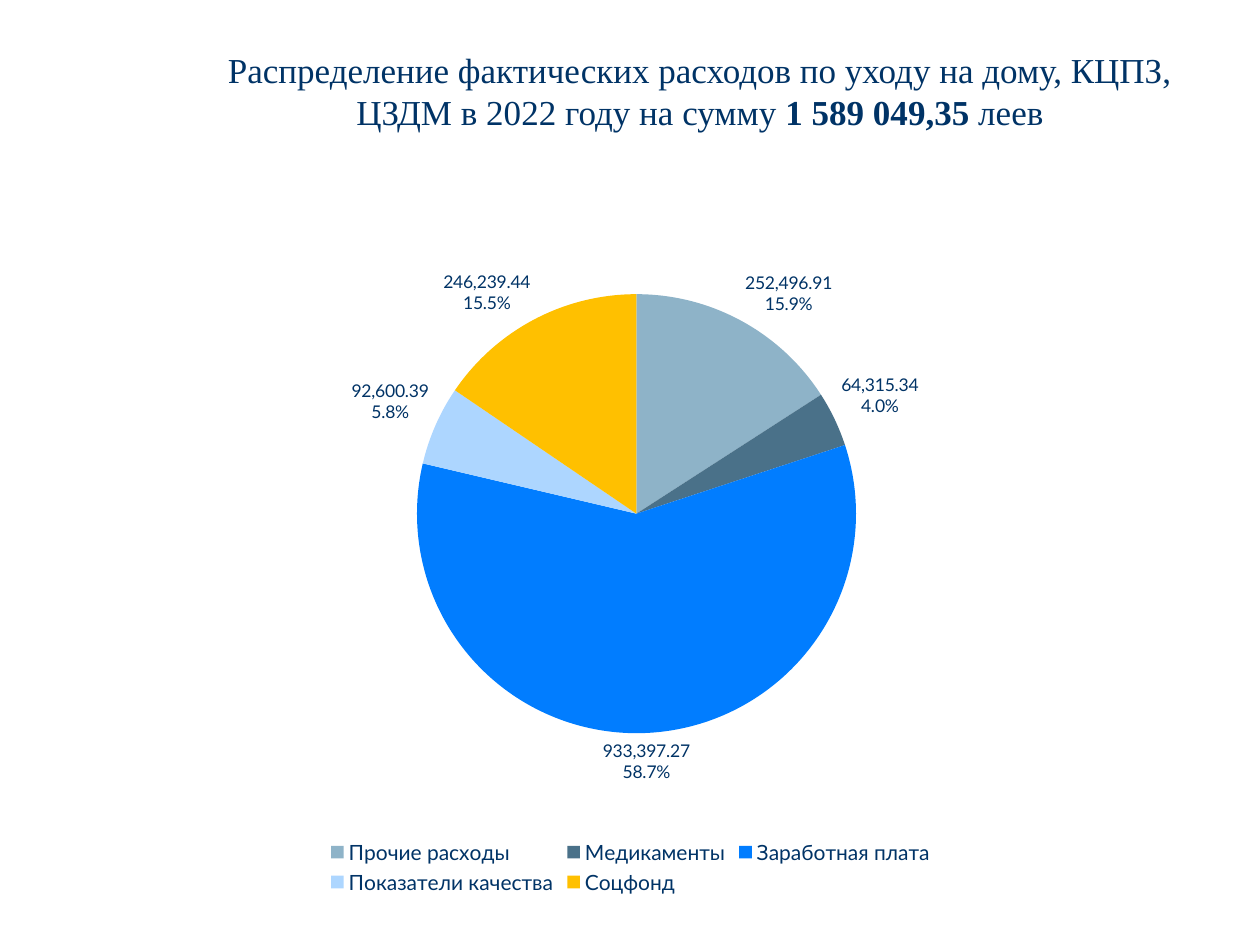
import pptx
import pptx.chart.data
import pptx.dml.color
import pptx.enum.chart
import pptx.enum.text
import pptx.oxml
import pptx.oxml.ns
import pptx.util
from pptx.util import Inches

COLORS = {
    "text": "003366",
    "other": "8EB3C8",
    "medicines": "4A7189",
    "salary": "017DFF",
    "quality": "ADD6FF",
    "social_fund": "FFC000",
}

EXPENSES = [
    ("Прочие расходы", 252496.91, "other"),
    ("Медикаменты", 64315.34, "medicines"),
    ("Заработная плата", 933397.27, "salary"),
    ("Показатели качества", 92600.39, "quality"),
    ("Соцфонд", 246239.44, "social_fund"),
]


def rgb(name):
    return pptx.dml.color.RGBColor.from_string(COLORS[name])


def add_text(paragraph, text, size=20, name="Times New Roman", color="text", bold=False):
    run = paragraph.add_run()
    run.text = text
    run.font.size = pptx.util.Pt(size)
    run.font.name = name
    run.font.bold = bold
    run.font.color.rgb = rgb(color)


presentation = pptx.Presentation()
presentation.slide_width = Inches(10)
presentation.slide_height = Inches(7.5)
slide = presentation.slides.add_slide(presentation.slide_layouts[5])

# Title
heading = slide.shapes.title
heading.left, heading.top = Inches(1.3), Inches(0.28)
heading.width, heading.height = Inches(8.51), Inches(0.87)
heading.text_frame.word_wrap = True
heading.text_frame.auto_size = pptx.enum.text.MSO_AUTO_SIZE.NONE
heading.text_frame.vertical_anchor = pptx.enum.text.MSO_ANCHOR.MIDDLE
sentence = heading.text_frame.paragraphs[0]
sentence.alignment = pptx.enum.text.PP_ALIGN.CENTER
add_text(sentence, "Распределение фактических расходов по уходу на дому, КЦПЗ, ЦЗДМ в 2022 году на сумму ")
add_text(sentence, "1 589 049,35 ", bold=True)
add_text(sentence, "леев")

# Pie of expenses
expense_data = pptx.chart.data.CategoryChartData(number_format="#,##0.00")
expense_data.categories = [label for label, amount, color in EXPENSES]
expense_data.add_series("Series 1", [amount for label, amount, color in EXPENSES])
expense_chart = slide.shapes.add_chart(
    pptx.enum.chart.XL_CHART_TYPE.PIE,
    Inches(0.28), Inches(1.86), Inches(9.45), Inches(5.28), expense_data,
).chart
expense_chart.has_title = False
expense_chart.font.name = "Lato"
expense_chart.font.size = pptx.util.Pt(10)
expense_chart.font.color.rgb = rgb("text")

pie = expense_chart.plots[0]
pie.vary_by_categories = True
slices = pie.series[0]
for index, (label, amount, color) in enumerate(EXPENSES):
    fill = slices.points[index].format.fill
    fill.solid()
    fill.fore_color.rgb = rgb(color)

# Amount and share beside each slice
amounts = slices.data_labels
amounts.show_value = True
amounts.show_percentage = True
amounts.number_format = "0.0%"
amounts.number_format_is_linked = False
amounts.position = pptx.enum.chart.XL_LABEL_POSITION.OUTSIDE_END

qn = pptx.oxml.ns.qn
chart_space = expense_chart._chartSpace
namespace = pptx.oxml.ns.nsdecls("c")
for label_flag in chart_space.iter(qn("c:showBubbleSize")):
    label_flag.addnext(pptx.oxml.parse_xml(f"<c:separator {namespace}>\n</c:separator>"))

# Legend
expense_chart.has_legend = True
expense_chart.legend.position = pptx.enum.chart.XL_LEGEND_POSITION.BOTTOM
expense_chart.legend.include_in_layout = False
expense_chart.legend.font.name = "Lato"
expense_chart.legend.font.size = pptx.util.Pt(12)
expense_chart.legend.font.color.rgb = rgb("text")

# Inner plot area, as fractions of the chart
plot_area = chart_space.find(".//" + qn("c:plotArea"))
for automatic_layout in plot_area.findall(qn("c:layout")):
    plot_area.remove(automatic_layout)
plot_area.insert(0, pptx.oxml.parse_xml(
    f'<c:layout {namespace}><c:manualLayout><c:layoutTarget val="inner"/>'
    '<c:xMode val="edge"/><c:yMode val="edge"/>'
    '<c:x val="0.09"/><c:y val="0.09"/><c:w val="0.83"/><c:h val="0.66"/>'
    "</c:manualLayout></c:layout>"
))

presentation.save("out.pptx")
